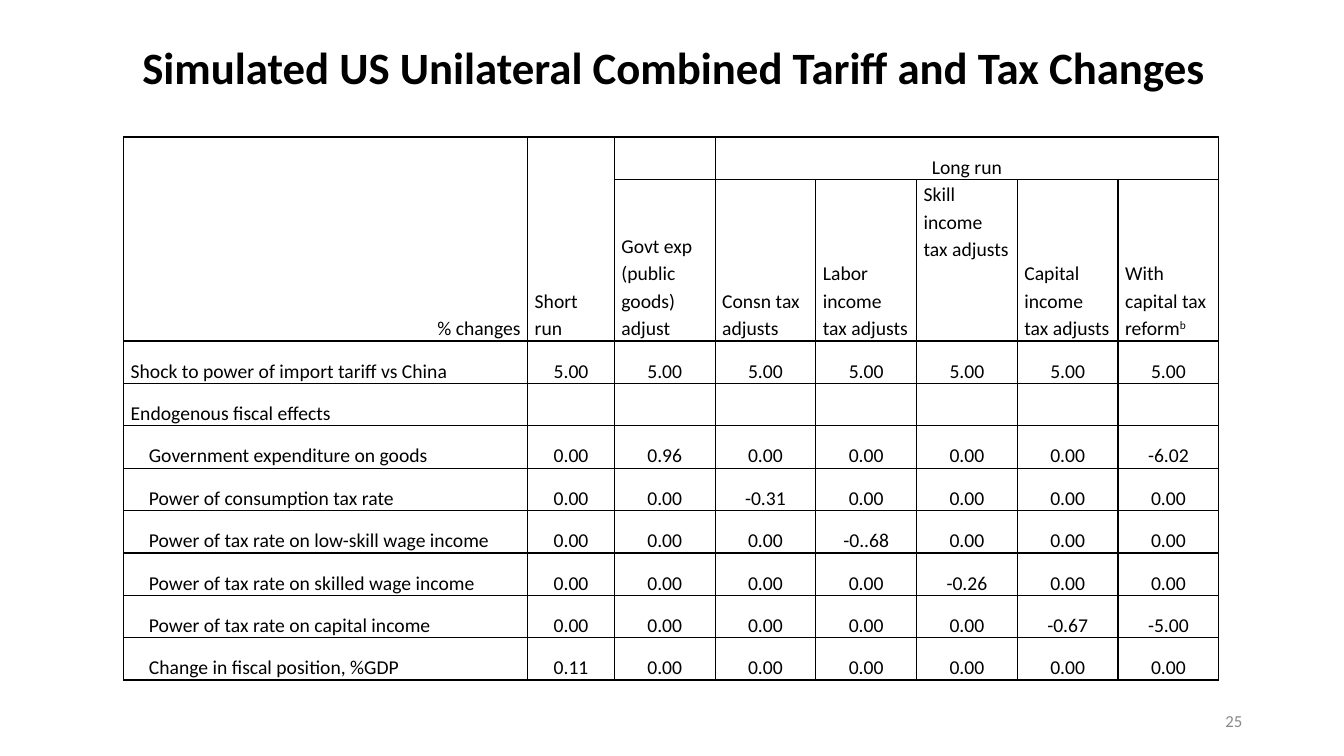
from lxml.etree import SubElement
from pptx import Presentation
from pptx.dml.color import RGBColor
from pptx.enum.text import MSO_ANCHOR, PP_ALIGN
from pptx.oxml.ns import qn
from pptx.util import Inches, Pt

BLACK = RGBColor(0x00, 0x00, 0x00)
GRAY = RGBColor(0x89, 0x89, 0x89)

COLUMN_WEIGHTS = [4.01, 0.86] + [1] * 6
ROW_WEIGHTS = [0.42, 1.6] + [0.42] * 8
COLUMN_HEADS = [
    "Govt exp (public goods) adjust",
    "Consn tax adjusts",
    "Labor income tax adjusts",
    "Skill income tax adjusts",
    "Capital income tax adjusts",
    "With capital tax reform",
]
SKILL_COLUMN = 5
FISCAL_EFFECTS = [
    ("Shock to power of import tariff vs China", False, ["5.00"] * 7),
    ("Endogenous fiscal effects", False, [""] * 7),
    ("Government expenditure on goods", True,
     ["0.00", "0.96", "0.00", "0.00", "0.00", "0.00", "-6.02"]),
    ("Power of consumption tax rate", True,
     ["0.00", "0.00", "-0.31", "0.00", "0.00", "0.00", "0.00"]),
    ("Power of tax rate on low-skill wage income", True,
     ["0.00", "0.00", "0.00", "-0..68", "0.00", "0.00", "0.00"]),
    ("Power of tax rate on skilled wage income", True,
     ["0.00", "0.00", "0.00", "0.00", "-0.26", "0.00", "0.00"]),
    ("Power of tax rate on capital income", True,
     ["0.00", "0.00", "0.00", "0.00", "0.00", "-0.67", "-5.00"]),
    ("Change in fiscal position, %GDP", True,
     ["0.11", "0.00", "0.00", "0.00", "0.00", "0.00", "0.00"]),
]


def apply(target, values):
    for name, value in values.items():
        setattr(target, name, value)


class TariffPage:
    font_name = "Calibri"
    cell_margins = {"margin_left": Inches(0.07), "margin_right": Inches(0.07),
                    "margin_top": 0, "margin_bottom": 0}
    label_indent = Inches(0.18)

    def __init__(self, deck):
        self.deck = deck
        self.page = deck.slides.add_slide(deck.slide_layouts[5])

    def area(self, left, top, width, height):
        """Turn percentages of the slide's size into a position and size."""
        across, down = self.deck.slide_width, self.deck.slide_height
        return {"left": round(across * left / 100), "top": round(down * top / 100),
                "width": round(across * width / 100), "height": round(down * height / 100)}

    def set_text(self, frame, text, size, color=BLACK, bold=False, superscript="", **layout):
        para = frame.paragraphs[0]
        apply(para, layout)
        apply(para.font, {"size": Pt(size), "name": self.font_name})
        for part in filter(None, (text, superscript)):
            span = para.add_run()
            span.text = part
            apply(span.font, {"size": Pt(size), "name": self.font_name, "bold": bold})
            span.font.color.rgb = color
        if superscript:
            span._r.get_or_add_rPr().set("baseline", "30000")

    def title(self, text, *place):
        box = self.page.shapes.title
        apply(box, self.area(*place))
        apply(box.text_frame, {"word_wrap": True, "vertical_anchor": MSO_ANCHOR.TOP})
        self.set_text(box.text_frame, text, 32, bold=True, alignment=PP_ALIGN.CENTER,
                      line_spacing=0.8, space_before=Pt(10))

    def page_number(self, text, *place):
        box = self.page.shapes.add_textbox(**self.area(*place))
        apply(box.text_frame, {"word_wrap": True, "vertical_anchor": MSO_ANCHOR.MIDDLE})
        self.set_text(box.text_frame, text, 12, GRAY, alignment=PP_ALIGN.RIGHT)

    def table(self, column_weights, row_weights, *place):
        """Add a plain ruled table whose columns and rows share its area by weight."""
        area = self.area(*place)
        table = self.page.shapes.add_table(
            len(row_weights), len(column_weights), **area).table
        apply(table, {"first_row": False, "horz_banding": False})
        for column, weight in zip(table.columns, column_weights):
            column.width = round(area["width"] * weight / sum(column_weights))
        for row, weight in zip(table.rows, row_weights):
            row.height = round(area["height"] * weight / sum(row_weights))
        for cell in table.iter_cells():
            self.rule(cell)
            cell.fill.background()
            apply(cell, self.cell_margins)
        return table

    def rule(self, cell):
        """Draw a thin black line on all four sides of a cell."""
        properties = cell._tc.get_or_add_tcPr()
        for side in ("a:lnL", "a:lnR", "a:lnT", "a:lnB"):
            line = SubElement(properties, qn(side), w=str(Pt(1)))
            fill = SubElement(line, qn("a:solidFill"))
            SubElement(fill, qn("a:srgbClr"), val=str(BLACK))

    def cell(self, cell, text, alignment=PP_ALIGN.LEFT, anchor=MSO_ANCHOR.BOTTOM,
             superscript="", indented=False):
        cell.vertical_anchor = anchor
        if indented:
            cell.margin_left += self.label_indent
        self.set_text(cell.text_frame, text, 14, superscript=superscript,
                      alignment=alignment, line_spacing=1.15)


def main():
    deck = Presentation()
    apply(deck, {"slide_width": Inches(13.33), "slide_height": Inches(7.5)})
    page = TariffPage(deck)
    page.title("Simulated US Unilateral Combined Tariff and Tax Changes",
               3.45, 6, 93.4, 8.93)
    page.page_number("25", 70.67, 92.67, 22.5, 5.33)

    table = page.table(COLUMN_WEIGHTS, ROW_WEIGHTS, 9.2, 18.13, 81.5, 71.87)
    for column in (0, 1):
        table.cell(0, column).merge(table.cell(1, column))
    table.cell(0, 3).merge(table.cell(0, 7))

    page.cell(table.cell(0, 0), "% changes", PP_ALIGN.RIGHT)
    page.cell(table.cell(0, 1), "Short run")
    page.cell(table.cell(0, 2), "")
    page.cell(table.cell(0, 3), "Long run", PP_ALIGN.CENTER)
    for column, head in enumerate(COLUMN_HEADS, 2):
        page.cell(table.cell(1, column), head,
                  anchor=MSO_ANCHOR.TOP if column == SKILL_COLUMN else MSO_ANCHOR.BOTTOM,
                  superscript="b" if head.endswith("reform") else "")
    for row, (label, indented, values) in enumerate(FISCAL_EFFECTS, 2):
        page.cell(table.cell(row, 0), label, indented=indented)
        for column, value in enumerate(values, 1):
            page.cell(table.cell(row, column), value, PP_ALIGN.CENTER)

    deck.save("out.pptx")


if __name__ == "__main__":
    main()
